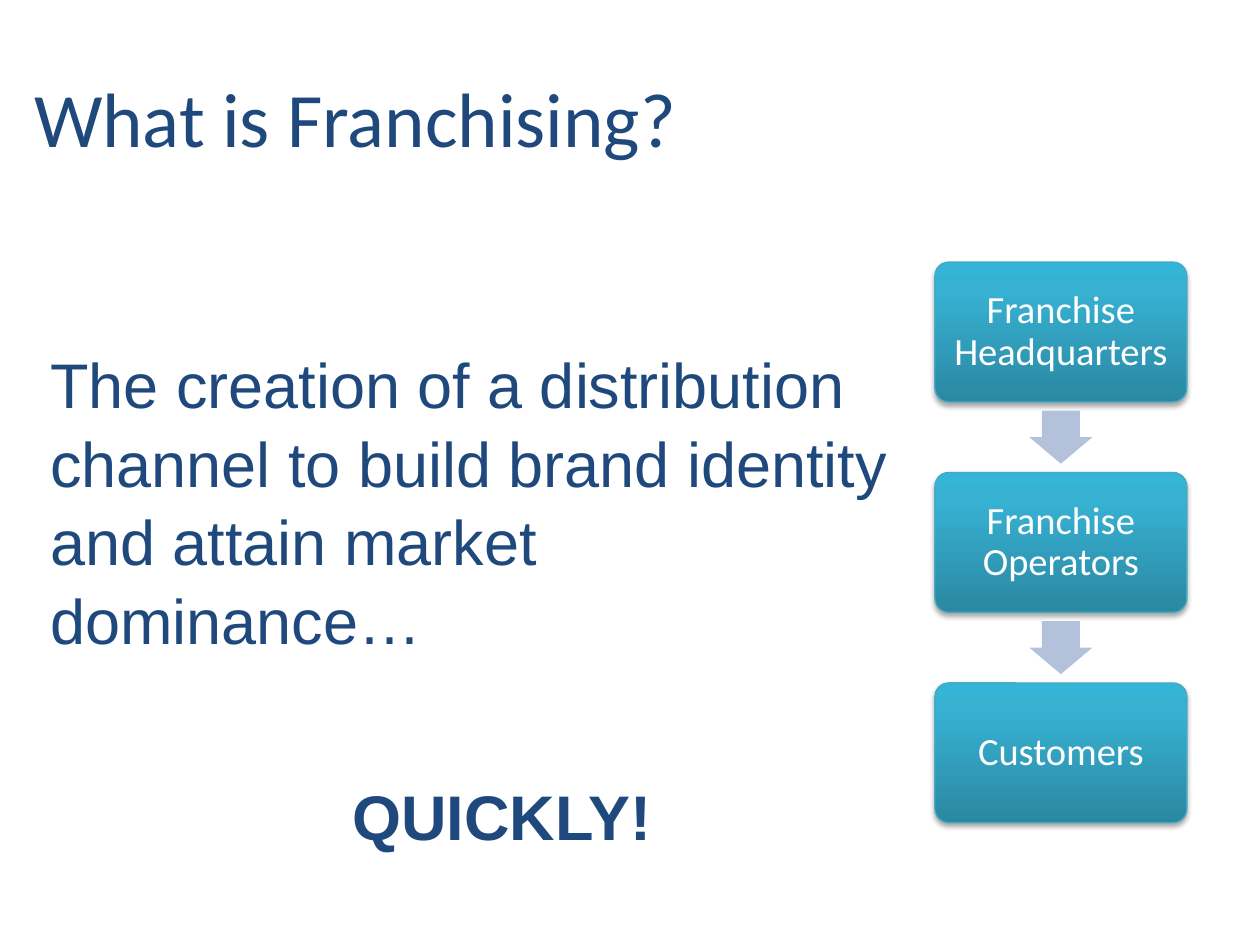
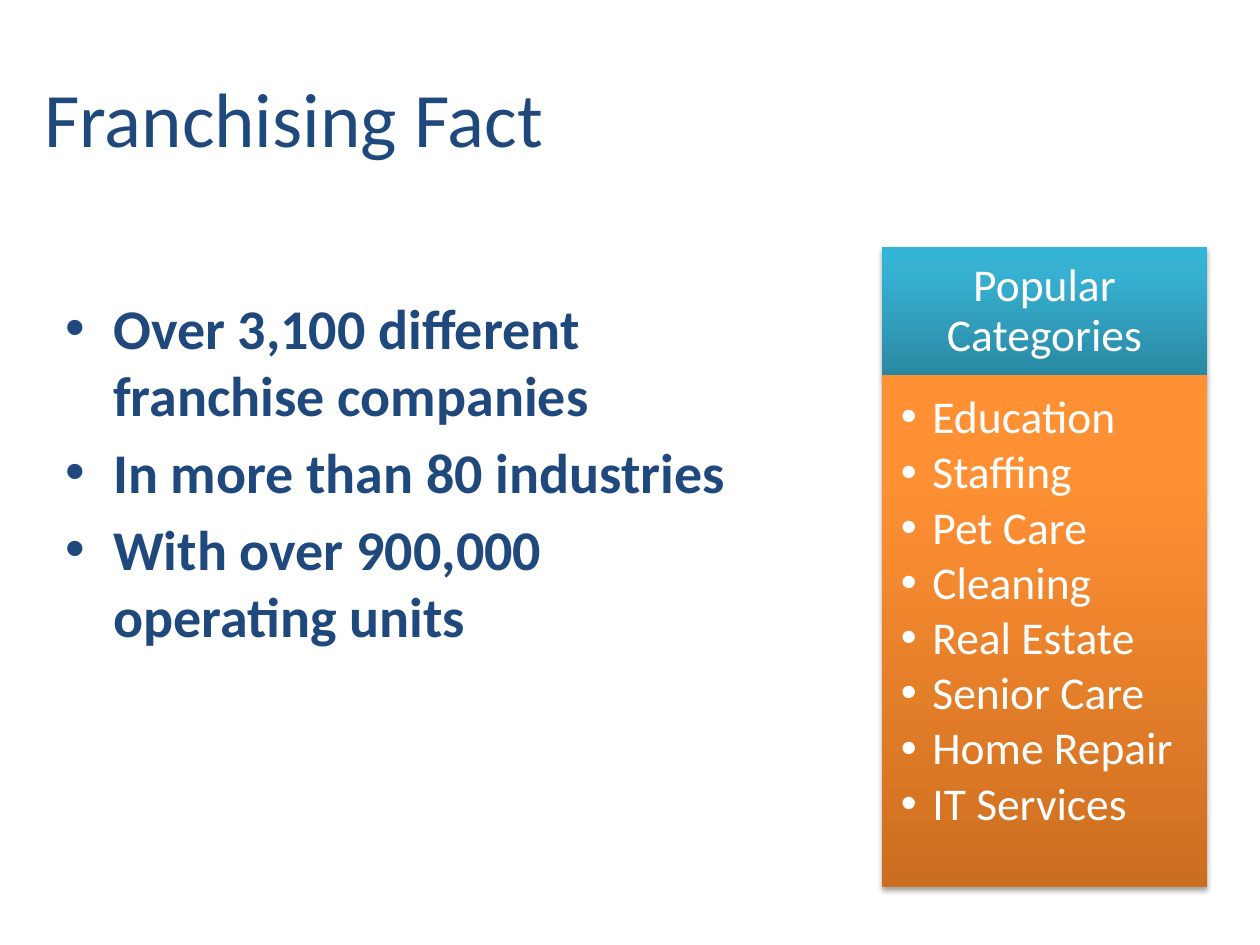
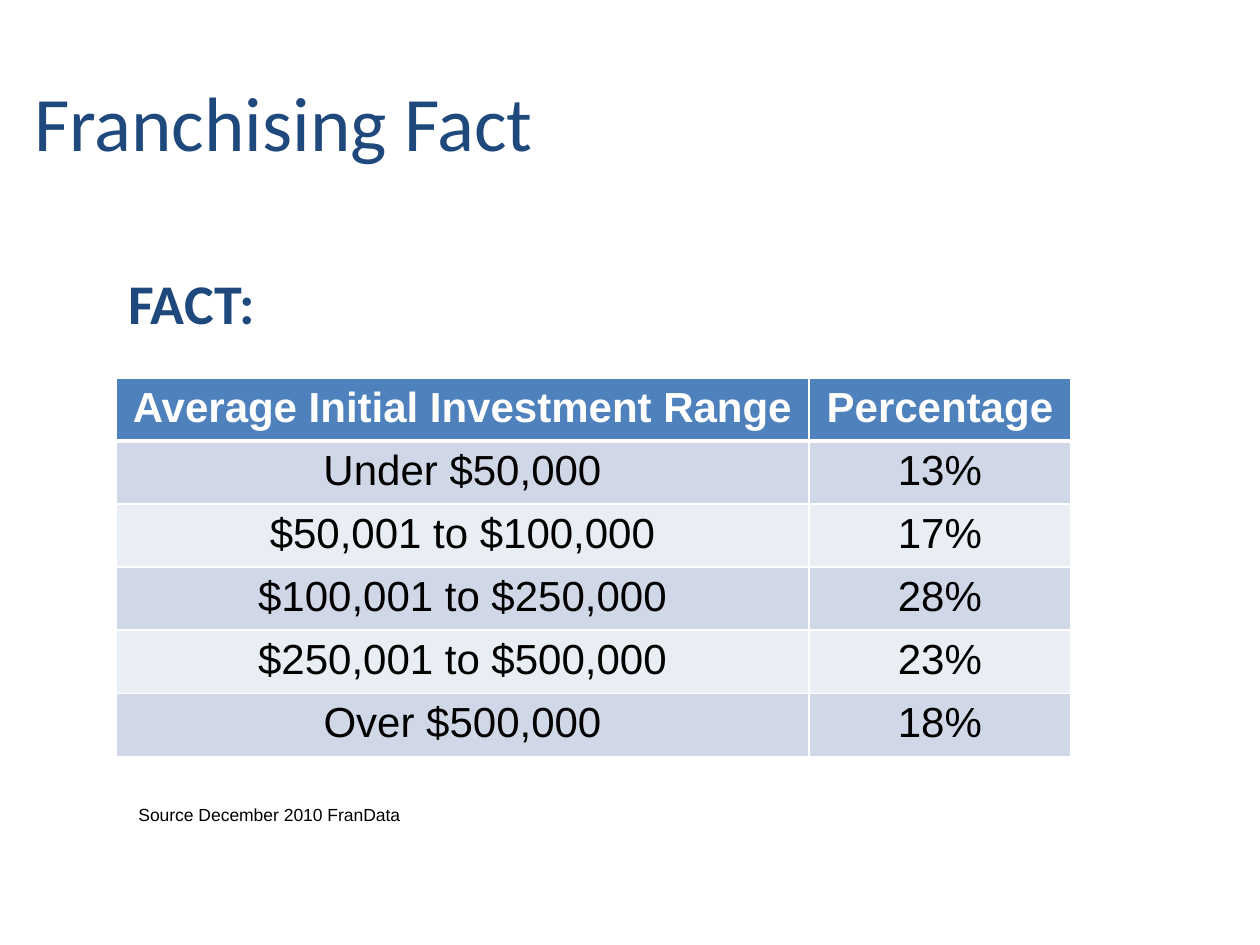
from copy import deepcopy

from lxml import etree
from pptx import Presentation
from pptx.dml.color import RGBColor
from pptx.enum.shapes import MSO_SHAPE as Preset
from pptx.enum.text import MSO_ANCHOR as Anchor, PP_ALIGN as Align
from pptx.oxml import parse_xml
from pptx.oxml.ns import nsdecls, qn
from pptx.util import Inches, Pt

TITLE_ONLY = 5
NAVY, WHITE, BLACK = "1F497D", "FFFFFF", "000000"
TEAL_EDGE, ARROW = "46AAC5", "B3C1DB"
TABLE_HEAD, TABLE_BANDS = "4F81BD", ("D0D8E8", "E9EDF4")
TEAL_GRADIENT = ((0, "2A88A2"), (0.8, "37B1D2"), (1, "34B4D6"))
ORANGE_GRADIENT = ((0, "CC6E20"), (0.8, "FF9034"), (1, "FF9136"))
HEADING_FONT, TEXT_FONT = "Calibri", "Arial"


def rgb(color):
    return RGBColor.from_string(color)


def inches(*lengths):
    return [Inches(length) for length in lengths]


def add_bullet(paragraph, indent):
    properties = paragraph._p.get_or_add_pPr()
    properties.set("marL", str(Inches(indent)))
    properties.set("indent", str(-Inches(indent)))
    for tag, key, value in (("a:buFont", "typeface", TEXT_FONT), ("a:buChar", "char", "•")):
        etree.SubElement(properties, qn(tag)).set(key, value)


def fill_upwards(shape, stops):
    """Fill with a three-stop gradient running from bottom to top."""
    shape.fill.gradient()
    shape.fill.gradient_angle = 90
    stop_list = shape._element.spPr.find(".//" + qn("a:gsLst"))
    stop_list.append(deepcopy(stop_list[0]))
    for stop, (position, color) in zip(shape.fill.gradient_stops, stops):
        stop.position = position
        stop.color.rgb = rgb(color)


def add_shadow(shape):
    shape._element.spPr.find(qn("a:effectLst")).append(parse_xml(
        f'<a:outerShdw {nsdecls("a")} blurRad="{Pt(3.1)}" dist="{Pt(1.8)}" '
        'dir="5400000" rotWithShape="0"><a:srgbClr val="000000">'
        '<a:alpha val="35000"/></a:srgbClr></a:outerShdw>'))


def set_borders(cell, bottom):
    """Draw white borders of one point, with a bottom one of its own width."""
    properties = cell._tc.get_or_add_tcPr()
    for index, (side, width) in enumerate(zip("LRTB", (1, 1, 1, bottom))):
        properties.insert(index, parse_xml(
            f'<a:ln{side} {nsdecls("a")} w="{Pt(width)}"><a:solidFill>'
            f'<a:srgbClr val="{WHITE}"/></a:solidFill></a:ln{side}>'))


class Deck:
    def __init__(self):
        self.show = Presentation()
        self.show.slide_width, self.show.slide_height = inches(10, 7.5)
        self.slide = None

    def start_slide(self, title, left, top=0.3, width=6):
        self.slide = self.show.slides.add_slide(self.show.slide_layouts[TITLE_ONLY])
        heading = self.slide.shapes.title
        heading.left, heading.top, heading.width, heading.height = inches(left, top, width, 1.25)
        self.fill_frame(heading.text_frame, [title], 44, anchor=Anchor.MIDDLE)

    def fill_frame(self, frame, lines, size, color=NAVY, font=HEADING_FONT, bold=False,
                   align=Align.LEFT, anchor=Anchor.TOP, spacing=None, before=0, after=0,
                   bullet=None, insets=None):
        frame.word_wrap = True
        frame.vertical_anchor = anchor
        if insets:
            (frame.margin_left, frame.margin_top,
             frame.margin_right, frame.margin_bottom) = inches(*insets)
        for index, line in enumerate(lines):
            paragraph = frame.add_paragraph() if index else frame.paragraphs[0]
            if bullet:
                add_bullet(paragraph, bullet)
            paragraph.alignment = align
            paragraph.line_spacing = spacing
            paragraph.space_before = Pt(before if index else 0)
            paragraph.space_after = Pt(after)
            run = paragraph.add_run()
            run.text = line
            run.font.name, run.font.size, run.font.bold = font, Pt(size), bold
            run.font.color.rgb = rgb(color)
        return frame

    def text(self, box, lines, size, **style):
        frame = self.slide.shapes.add_textbox(*inches(*box)).text_frame
        return self.fill_frame(frame, lines, size, **style)

    def panel(self, preset, box, stops, lines, size, edge=None, **style):
        """Add a shaded shape with white text in it."""
        panel = self.slide.shapes.add_shape(preset, *inches(*box))
        panel.shadow.inherit = False
        fill_upwards(panel, stops)
        add_shadow(panel)
        if edge:
            panel.line.color.rgb = rgb(edge)
            panel.line.width = Pt(0.75)
        else:
            panel.line.fill.background()
        self.fill_frame(panel.text_frame, lines, size, color=WHITE, spacing=0.9, **style)
        return panel

    def down_arrow(self, box):
        arrow = self.slide.shapes.add_shape(Preset.DOWN_ARROW, *inches(*box))
        arrow.shadow.inherit = False
        arrow.adjustments[0], arrow.adjustments[1] = 0.6, 0.5
        arrow.fill.solid()
        arrow.fill.fore_color.rgb = rgb(ARROW)
        arrow.line.fill.background()

    def table(self, left, top, column_widths, row_height, rows):
        box = inches(left, top, sum(column_widths), row_height * len(rows))
        table = self.slide.shapes.add_table(len(rows), len(column_widths), *box).table
        for column, width in zip(table.columns, column_widths):
            column.width = Inches(width)
        for row_index, row in enumerate(rows):
            is_head = row_index == 0
            for column_index, value in enumerate(row):
                cell = table.cell(row_index, column_index)
                cell.fill.solid()
                cell.fill.fore_color.rgb = rgb(
                    TABLE_HEAD if is_head else TABLE_BANDS[(row_index - 1) % 2])
                set_borders(cell, bottom=3 if is_head else 1)
                self.fill_frame(cell.text_frame, [value], 24, WHITE if is_head else BLACK,
                                TEXT_FONT, bold=is_head, align=Align.CENTER)


def definition_slide(deck):
    deck.start_slide("What is Franchising?", 0.17, width=5.92)
    definition = deck.text(
        (0.25, 2.67, 7, 3.08),
        ["The creation of a distribution channel to build brand identity "
         "and attain market dominance…", "QUICKLY!"],
        36, font=TEXT_FONT, spacing=1.04, before=61, after=6)
    for paragraph, indent in zip(definition.paragraphs, (0.05, 2.45)):
        paragraph._p.get_or_add_pPr().set("marL", str(Inches(indent)))
    definition.paragraphs[1].runs[0].font.bold = True

    left, top, width, height, pitch = 7.42, 2.08, 2, 1.11, 1.67
    levels = ["Franchise Headquarters", "Franchise Operators", "Customers"]
    for index, level in enumerate(levels):
        level_top = top + index * pitch
        box = deck.panel(Preset.ROUNDED_RECTANGLE, (left, level_top, width, height),
                         TEAL_GRADIENT, [level], 22, edge=TEAL_EDGE, align=Align.CENTER,
                         anchor=Anchor.MIDDLE, insets=[0.12] * 4)
        box.adjustments[0] = 0.1
        if index < len(levels) - 1:
            deck.down_arrow((left + width / 2 - 0.25, level_top + height + 0.07, 0.5, 0.42))


def industries_slide(deck):
    deck.start_slide("Franchising Fact", 0.25)
    deck.text((0.42, 2.28, 5.75, 5),
              ["Over 3,100 different franchise companies", "In more than 80 industries",
               "With over 900,000 operating units"],
              32, bold=True, before=5.5, bullet=0.38)
    left, width = 7, 2.58
    deck.panel(Preset.RECTANGLE, (left, 1.96, width, 1.03), TEAL_GRADIENT,
               ["Popular Categories"], 26, align=Align.CENTER, anchor=Anchor.MIDDLE,
               insets=(0.2, 0.12, 0.2, 0.12))
    deck.panel(Preset.RECTANGLE, (left, 2.98, width, 4.06), ORANGE_GRADIENT,
               ["Education", "Staffing", "Pet Care", "Cleaning", "Real Estate",
                "Senior Care", "Home Repair", "IT Services"],
               26, after=3.5, bullet=0.25, insets=(0.15, 0.15, 0.2, 0.23))


def investment_slide(deck):
    deck.start_slide("Franchising Fact", 0.17, top=0.33, width=5.75)
    deck.text((0.92, 2.08, 1.48, 0.64), ["FACT:"], 32, bold=True)
    deck.table(0.92, 3, (5.5, 2.08), 0.5, [
        ("Average Initial Investment Range", "Percentage"),
        ("Under $50,000", "13%"),
        ("$50,001 to $100,000", "17%"),
        ("$100,001 to $250,000", "28%"),
        ("$250,001 to $500,000", "23%"),
        ("Over $500,000", "18%"),
    ])
    deck.text((1, 6.33, 5.25, 0.27), ["Source December 2010 FranData"], 10,
              color=BLACK, font=TEXT_FONT)


def main():
    deck = Deck()
    definition_slide(deck)
    industries_slide(deck)
    investment_slide(deck)
    deck.show.save("out.pptx")


if __name__ == "__main__":
    main()
